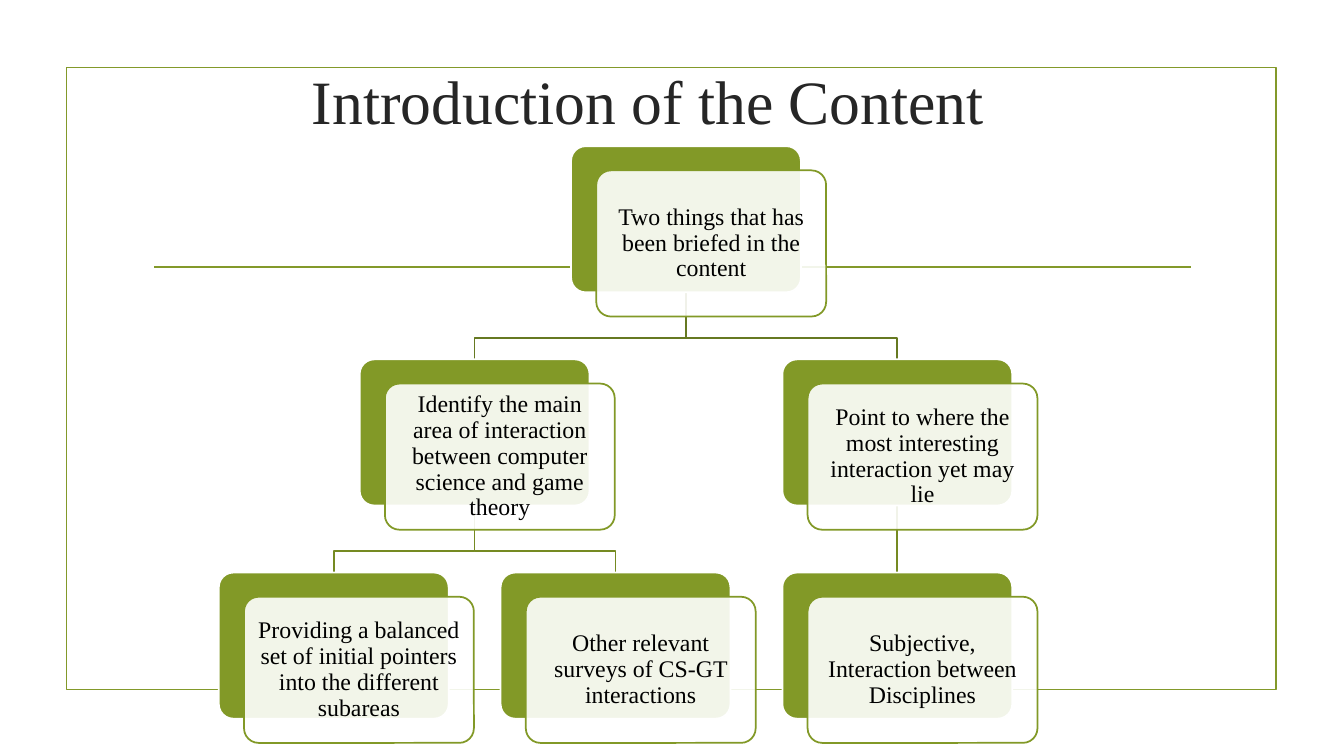
from dataclasses import dataclass, field

from lxml.etree import SubElement
from pptx import Presentation
from pptx.dml.color import RGBColor
from pptx.enum.shapes import MSO_CONNECTOR as Connector, MSO_SHAPE as Shape
from pptx.enum.text import MSO_ANCHOR as Anchor, PP_ALIGN as Align
from pptx.oxml.ns import qn
from pptx.util import Inches, Pt


@dataclass(frozen=True)
class Theme:
    font: str = "Times New Roman"
    title_size: float = 44
    card_size: float = 17
    line_width: float = 1.25
    frame: str = "83992A"
    card: str = "829927"
    upper_link: str = "667921"
    lower_link: str = "758A22"
    title: str = "262626"
    text: str = "000000"
    white: str = "FFFFFF"


@dataclass
class Node:
    text: str
    children: list = field(default_factory=list)
    left: float = 0
    top: float = 0


THEME = Theme()
CARD_WIDTH, CARD_HEIGHT = 2.28, 1.45
FRONT_SHIFT_X, FRONT_SHIFT_Y = 0.25, 0.24
ELBOW_RISE = 0.21

TREE = Node("Two things that has been briefed in the content", [
    Node("Identify the main area of interaction between computer science and game theory", [
        Node("Providing a balanced set of initial pointers into the different subareas"),
        Node("Other relevant surveys of CS-GT interactions"),
    ]),
    Node("Point to where the most interesting interaction yet may lie", [
        Node("Subjective, Interaction between Disciplines"),
    ]),
])


def color(code):
    return RGBColor.from_string(code)


def style_line(shape, code):
    shape.line.color.rgb = color(code)
    shape.line.width = Pt(THEME.line_width)


def add_line(page, start, end, code):
    line = page.shapes.add_connector(Connector.STRAIGHT, *map(Inches, start + end))
    style_line(line, code)
    SubElement(line._element.spPr, qn("a:effectLst"))


def write_text(shape, text, size, code, inset_x, inset_y, spacing=1.0):
    frame = shape.text_frame
    frame.word_wrap = True
    frame.vertical_anchor = Anchor.MIDDLE
    frame.margin_left = frame.margin_right = Inches(inset_x)
    frame.margin_top = frame.margin_bottom = Inches(inset_y)
    para = frame.paragraphs[0]
    para.alignment = Align.CENTER
    para.line_spacing = spacing
    span = para.add_run()
    span.text = text
    span.font.name = THEME.font
    span.font.size = Pt(size)
    span.font.color.rgb = color(code)


def draw_frame(page, left, top, width, height):
    border = page.shapes.add_shape(Shape.RECTANGLE, *map(Inches, (left, top, width, height)))
    border.shadow.inherit = False
    border.fill.background()
    style_line(border, THEME.frame)
    rule_top = top + 1.98
    add_line(page, (left + 0.87, rule_top), (left + width - 0.85, rule_top), THEME.frame)


def draw_title(page, left, top, width, height):
    box = page.shapes.add_textbox(*map(Inches, (left, top, width, height)))
    write_text(box, "Introduction of the Content", THEME.title_size, THEME.title, 0.1, 0.05)


def place_nodes(node, top, row_step, leaf_lefts):
    node.top = top
    for child in node.children:
        place_nodes(child, top + row_step, row_step, leaf_lefts)
    if node.children:
        node.left = (node.children[0].left + node.children[-1].left) / 2
    else:
        node.left = next(leaf_lefts)


def draw_links(page, node, code):
    start_x, start_y = node.left + CARD_WIDTH / 2, node.top + CARD_HEIGHT
    for child in node.children:
        end_x, end_y = child.left + CARD_WIDTH / 2, child.top
        if abs(end_x - start_x) < 0.01:
            add_line(page, (start_x, start_y), (end_x, end_y), code)
        else:
            elbow_y = end_y - ELBOW_RISE
            route = page.shapes.build_freeform(Inches(start_x), Inches(start_y))
            corners = [(start_x, elbow_y), (end_x, elbow_y), (end_x, end_y)]
            route.add_line_segments([(Inches(x), Inches(y)) for x, y in corners], close=False)
            link = route.convert_to_shape()
            link.shadow.inherit = False
            link.fill.background()
            style_line(link, code)
        draw_links(page, child, THEME.lower_link)


def add_card(page, left, top, fill, outline):
    card = page.shapes.add_shape(
        Shape.ROUNDED_RECTANGLE, *map(Inches, (left, top, CARD_WIDTH, CARD_HEIGHT)))
    card.adjustments[0] = 0.1
    card.shadow.inherit = False
    card.fill.solid()
    card.fill.fore_color.rgb = color(fill)
    style_line(card, outline)
    return card


def draw_cards(page, node):
    add_card(page, node.left, node.top, THEME.card, THEME.white)
    front = add_card(page, node.left + FRONT_SHIFT_X, node.top + FRONT_SHIFT_Y,
                     THEME.white, THEME.card)
    fill_color = front._element.spPr.find(qn("a:solidFill"))[0]
    SubElement(fill_color, qn("a:alpha"), val="90000")
    write_text(front, node.text, THEME.card_size, THEME.text, 0.1, 0.1, 0.9)
    for child in node.children:
        draw_cards(page, child)


def draw_hierarchy(page, left, top, width, height):
    column_step = (width - CARD_WIDTH - FRONT_SHIFT_X) / 2
    row_step = (height - CARD_HEIGHT - FRONT_SHIFT_Y) / 2
    leaf_lefts = iter([left + column * column_step for column in range(3)])
    place_nodes(TREE, top, row_step, leaf_lefts)
    draw_links(page, TREE, THEME.upper_link)
    draw_cards(page, TREE)


def main():
    deck = Presentation()
    deck.slide_width, deck.slide_height = Inches(13.33), Inches(7.5)
    page = deck.slides.add_slide(deck.slide_layouts[6])
    draw_frame(page, 0.66, 0.67, 12, 6.17)
    draw_title(page, 0.68, 0.27, 11.5, 1.45)
    draw_hierarchy(page, 2.17, 1.45, 8.12, 5.92)
    deck.save("out.pptx")


if __name__ == "__main__":
    main()
